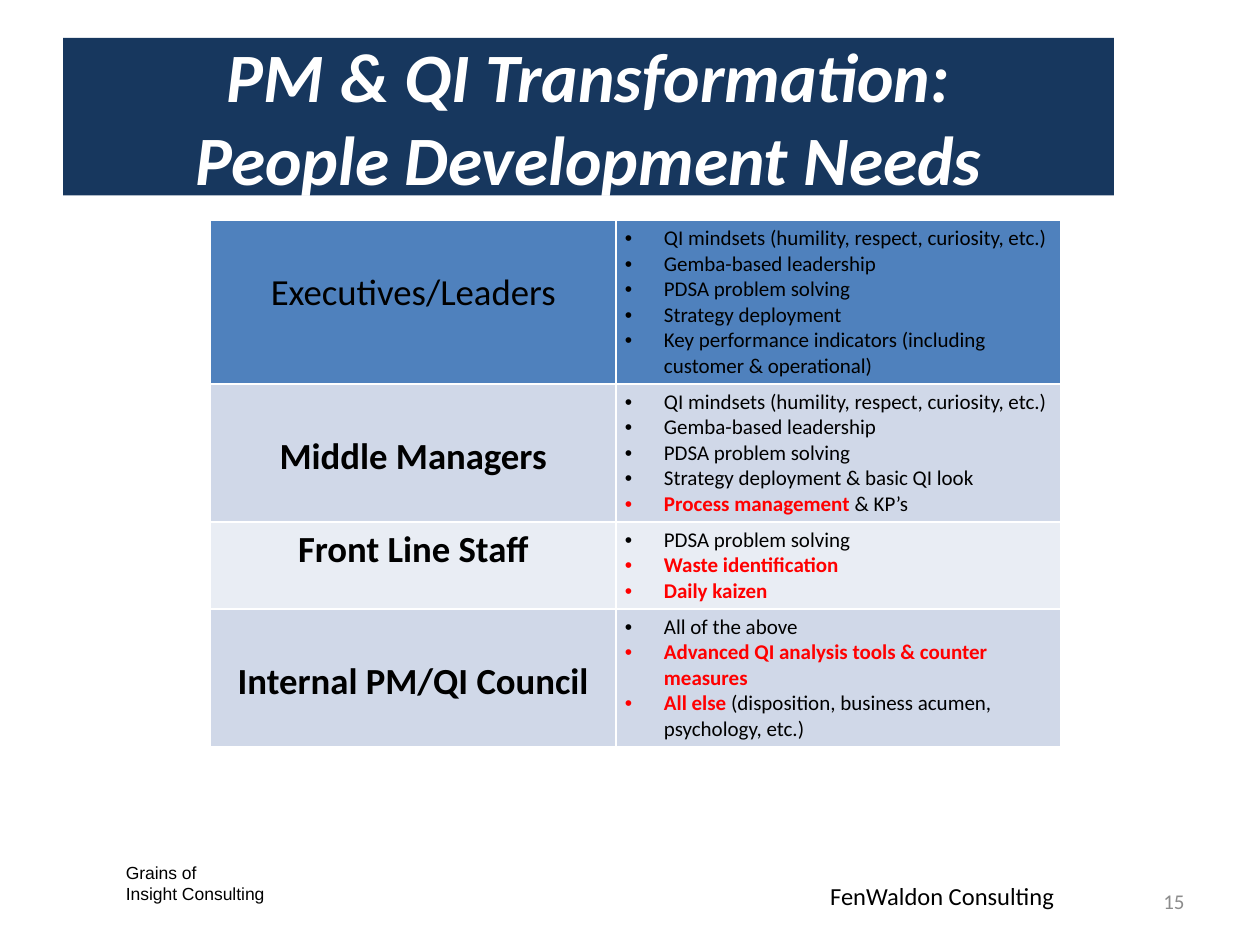
from lxml import etree
from pptx import Presentation
from pptx.dml.color import RGBColor
from pptx.enum.text import MSO_ANCHOR, MSO_AUTO_SIZE, PP_ALIGN
from pptx.oxml.ns import qn
from pptx.util import Inches, Pt

LEFT, CENTER, RIGHT = PP_ALIGN.LEFT, PP_ALIGN.CENTER, PP_ALIGN.RIGHT
TOP, MIDDLE = MSO_ANCHOR.TOP, MSO_ANCHOR.MIDDLE
BLACK, WHITE, RED, NAVY, GREY = "000000", "FFFFFF", "FF0000", "17375E", "8C8C8C"
BLUE, PALE, PALER = "4F81BD", "D0D8E8", "E9EDF4"

TITLE = "PM & QI Transformation:\vPeople Development Needs"
SHARED = ["QI mindsets (humility, respect, curiosity, etc.)", "Gemba-based leadership",
          "PDSA problem solving"]

# Each need is plain text, or a (highlighted, plain) pair.
GROUPS = [
    dict(label="Executives/Leaders", bold=False, fill=BLUE, height=1.27, label_top=0.4,
         needs=SHARED + ["Strategy deployment",
                         "Key performance indicators (including customer & operational)"]),
    dict(label="Middle Managers", bold=True, fill=PALE, height=1.07, label_top=0.4,
         needs=SHARED + ["Strategy deployment & basic QI look",
                         ("Process management ", "& KP’s")]),
    dict(label="Front Line Staff", bold=True, fill=PALER, height=0.68, label_top=0.04,
         needs=["PDSA problem solving", ("Waste identification", ""), ("Daily kaizen", "")]),
    dict(label="Internal PM/QI Council", bold=True, fill=PALE, height=1.07, label_top=0.4,
         needs=["All of the above", ("Advanced QI analysis tools & counter measures", ""),
                ("All else ", "(disposition, business acumen, psychology, etc.)")]),
]
COLUMN_WIDTHS = [3.22, 3.53]

FOOTERS = [
    dict(lines=["Grains of", "Insight Consulting"], box=(0.9, 6.79, 2.35, 0.44),
         size=10, name="Arial"),
    dict(lines=["FenWaldon Consulting"], box=(6.49, 6.94, 2.92, 0.23), size=14),
    dict(lines=["15"], box=(7.17, 6.95, 2.33, 0.4), size=12, color=GREY,
         align=RIGHT, anchor=MIDDLE),
]


def rgb(color):
    return RGBColor.from_string(color)


def fill_solid(target, color):
    target.fill.solid()
    target.fill.fore_color.rgb = rgb(color)


def write(paragraph, text, size=12, color=BLACK, bold=False, italic=False,
          name="Calibri", align=LEFT):
    """Append text to the paragraph; a vertical tab becomes a line break."""
    paragraph.alignment = align
    for index, line in enumerate(text.split("\v")):
        if index:
            paragraph.add_line_break()
        run = paragraph.add_run()
        run.text = line
        font = run.font
        font.size, font.bold, font.italic, font.name = Pt(size), bold, italic, name
        font.color.rgb = rgb(color)


def paragraphs_for(frame, items):
    """Yield one paragraph of the frame with each item."""
    for index, item in enumerate(items):
        yield (frame.add_paragraph() if index else frame.paragraphs[0]), item


def add_bullet(paragraph, indent=0.31):
    properties = paragraph._p.get_or_add_pPr()
    properties.set("marL", str(Inches(indent)))
    properties.set("indent", str(-Inches(indent)))
    etree.SubElement(properties, qn("a:buFont"), typeface="Arial")
    etree.SubElement(properties, qn("a:buChar"), char="•")


def format_cell(cell, color, top=0.04):
    """Set margins, white one-point borders and the fill."""
    cell.margin_left = cell.margin_right = Inches(0.07)
    cell.margin_top, cell.margin_bottom = Inches(top), Inches(0.04)
    properties = cell._tc.get_or_add_tcPr()
    for side in ("lnL", "lnR", "lnT", "lnB"):
        line = etree.SubElement(properties, qn(f"a:{side}"), w=str(Pt(1)))
        solid = etree.SubElement(line, qn("a:solidFill"))
        etree.SubElement(solid, qn("a:srgbClr"), val=WHITE)
    fill_solid(cell, color)


def add_title(slide):
    title = slide.shapes.title
    title.left, title.top = Inches(0.5), Inches(0.3)
    title.width, title.height = Inches(8.34), Inches(1.25)
    fill_solid(title, NAVY)
    frame = title.text_frame
    frame.auto_size, frame.vertical_anchor = MSO_AUTO_SIZE.NONE, MIDDLE
    write(frame.paragraphs[0], TITLE, size=39.6, color=WHITE, bold=True, italic=True,
          align=CENTER)


def add_needs_table(slide):
    height = sum(group["height"] for group in GROUPS)
    table = slide.shapes.add_table(len(GROUPS), 2, Inches(1.67), Inches(1.75),
                                   Inches(sum(COLUMN_WIDTHS)), Inches(height)).table
    table.first_row = table.horz_banding = False
    for column, width in zip(table.columns, COLUMN_WIDTHS):
        column.width = Inches(width)
    for row, group in zip(table.rows, GROUPS):
        row.height = Inches(group["height"])
        label_cell, needs_cell = row.cells
        format_cell(label_cell, group["fill"], top=group["label_top"])
        format_cell(needs_cell, group["fill"])
        write(label_cell.text_frame.paragraphs[0], group["label"], size=21,
              bold=group["bold"], align=CENTER)
        for paragraph, need in paragraphs_for(needs_cell.text_frame, group["needs"]):
            highlighted, plain = need if isinstance(need, tuple) else ("", need)
            add_bullet(paragraph)
            if highlighted:
                write(paragraph, highlighted, color=RED, bold=True)
            if plain:
                write(paragraph, plain)


def add_footer(slide, lines, box, anchor=TOP, **text_format):
    frame = slide.shapes.add_textbox(*map(Inches, box)).text_frame
    frame.word_wrap, frame.vertical_anchor = True, anchor
    for paragraph, line in paragraphs_for(frame, lines):
        write(paragraph, line, **text_format)


def main():
    presentation = Presentation()
    presentation.slide_width, presentation.slide_height = Inches(10), Inches(7.5)
    slide = presentation.slides.add_slide(presentation.slide_layouts[5])
    add_title(slide)
    add_needs_table(slide)
    for footer in FOOTERS:
        add_footer(slide, **footer)
    presentation.save("out.pptx")


if __name__ == "__main__":
    main()
